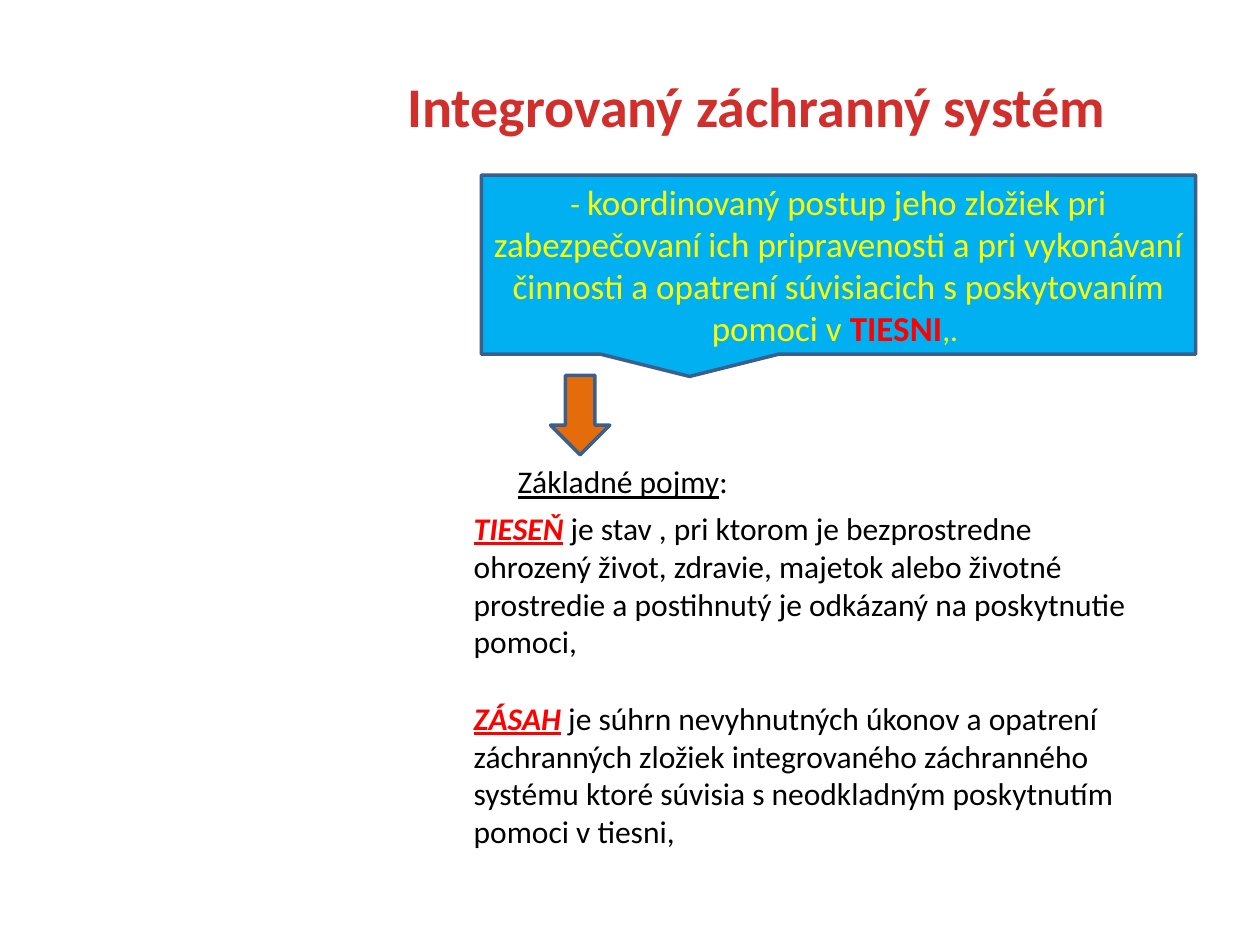
from pptx import Presentation
from pptx.dml.color import RGBColor
from pptx.enum import shapes, text
from pptx.oxml.ns import qn
from pptx.util import Inches, Pt

# Content: each paragraph is a list of (words, style) runs
TITLE = [[("Integrovaný záchranný systém", "title")]]
CALL = [[
    ("- ", "mark"),
    ("koordinovaný postup jeho zložiek pri zabezpečovaní ich pripravenosti "
     "a pri vykonávaní činnosti a opatrení súvisiacich s poskytovaním "
     "pomoci v ", "call"),
    ("TIESNI", "alert"),
    (",. ", "mark"),
]]
HEAD = [[("Základné pojmy", "head"), (":", "body")]]
TERMS = [
    [("TIESEŇ", "term"),
     (" je stav , pri ktorom je bezprostredne ohrozený život, zdravie, "
      "majetok alebo životné prostredie a postihnutý je odkázaný na "
      "poskytnutie pomoci,", "body")],
    [("ZÁSAH", "term"),
     (" je súhrn nevyhnutných úkonov a opatrení záchranných zložiek "
      "integrovaného záchranného systému ktoré súvisia s neodkladným "
      "poskytnutím pomoci v tiesni,", "body")],
]

# Theme: run styles are (size, colour, bold, italic, underline)
THEME = {
    "font": "Calibri",
    "blue": "00B0F0", "orange": "E46C0A", "edge": "3A5F8C",
    "title": (32, "D02F2C", True, False, False),
    "mark": (18, "FFFF00", False, False, False),
    "call": (20, "FFFF00", False, False, False),
    "alert": (20, "FF0000", True, False, False),
    "head": (18, "000000", False, False, True),
    "body": (18, "000000", False, False, False),
    "term": (18, "FF0000", True, True, True),
}


def place(shape, *box):
    shape.left, shape.top, shape.width, shape.height = map(Inches, box)


def write(shape, paras, align, anchor, gap=0, wrap=True):
    frame = shape.text_frame
    frame.word_wrap = wrap
    frame.auto_size = text.MSO_AUTO_SIZE.NONE
    frame.vertical_anchor = anchor
    frame.text = "\n".join("" for _ in paras)
    for i, (para, runs) in enumerate(zip(frame.paragraphs, paras)):
        para.alignment = align
        para.space_before = Pt(gap if i else 0)
        for words, style in runs:
            run = para.add_run()
            run.text = words
            font = run.font
            size, tint, font.bold, font.italic, font.underline = THEME[style]
            font.name = THEME["font"]
            font.size = Pt(size)
            font.color.rgb = RGBColor.from_string(tint)


def draw(slide, kind, fill, *box):
    shape = slide.shapes.add_shape(kind, *map(Inches, box))
    shape.shadow.inherit = False
    shape.fill.solid()
    shape.fill.fore_color.rgb = RGBColor.from_string(THEME[fill])
    shape.line.color.rgb = RGBColor.from_string(THEME["edge"])
    shape.line.width = Pt(2)
    return shape


def main():
    deck = Presentation()
    deck.slide_width, deck.slide_height = Inches(10), Inches(7.5)
    slide = deck.slides.add_slide(deck.slide_layouts[1])
    left, mid = text.PP_ALIGN.LEFT, text.PP_ALIGN.CENTER
    top, centre = text.MSO_ANCHOR.TOP, text.MSO_ANCHOR.MIDDLE
    kinds = shapes.MSO_SHAPE

    # Title
    title = slide.shapes.title
    place(title, 3.11, 0.52, 5.79, 0.64)
    write(title, TITLE, mid, top, wrap=False)

    # Callout and arrow
    call = draw(slide, kinds.RECTANGULAR_CALLOUT, "blue", 3.82, 1.39, 5.67, 1.42)
    write(call, CALL, mid, centre)
    draw(slide, kinds.DOWN_ARROW, "orange", 4.37, 2.98, 0.47, 0.63)

    # Heading of the terms
    head = slide.shapes.add_textbox(*map(Inches, (4.01, 3.62, 2.13, 0.4)))
    write(head, HEAD, left, top)

    # Terms, without bullets
    terms = slide.placeholders[1]
    place(terms, 3.66, 3.99, 5.61, 3.43)
    write(terms, TERMS, left, top, gap=22)
    for para in terms.text_frame.paragraphs:
        props = para._p.get_or_add_pPr()
        props.set("marL", "0")
        props.set("indent", "0")
        props.append(props.makeelement(qn("a:buNone"), {}))

    deck.save("out.pptx")


if __name__ == "__main__":
    main()
